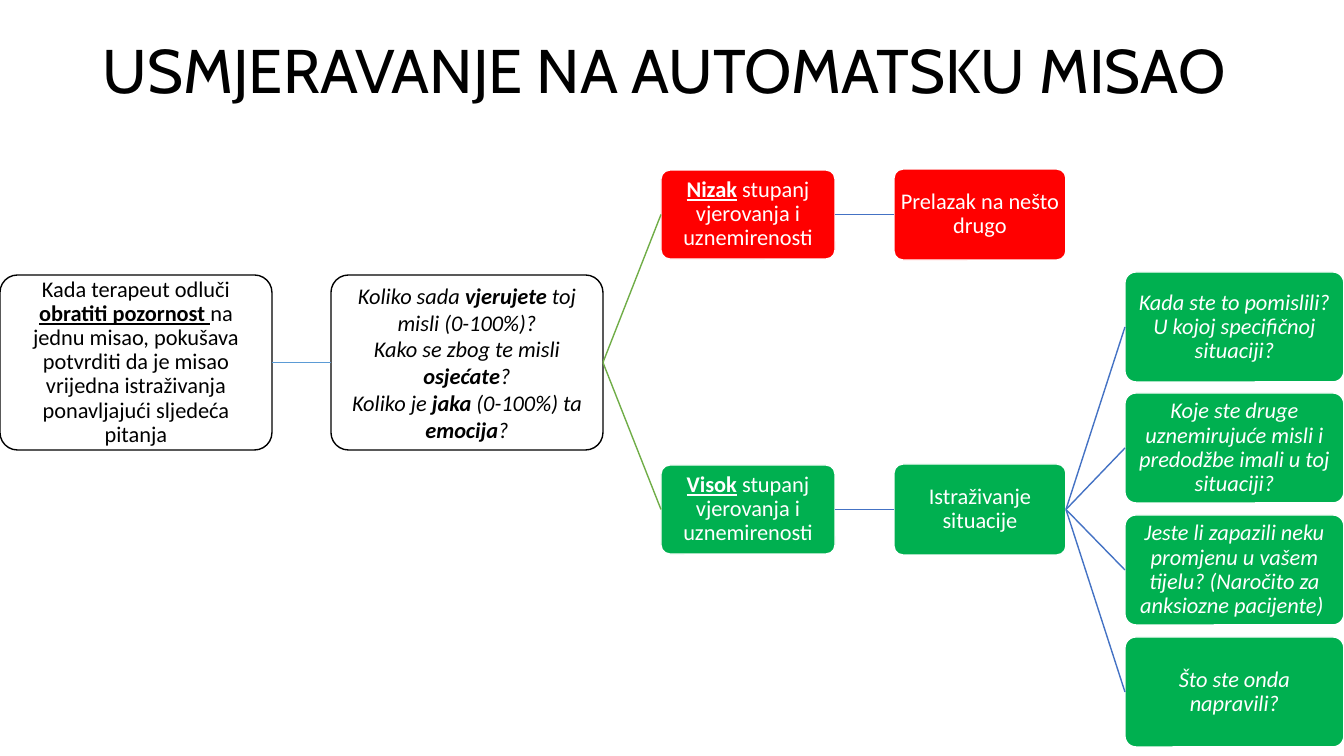
import pptx
import pptx.dml.color
import pptx.enum.shapes
import pptx.enum.text
import pptx.oxml.ns
import pptx.util
from lxml import etree

RGBColor = pptx.dml.color.RGBColor
BLACK = RGBColor(0x00, 0x00, 0x00)
WHITE = RGBColor(0xFF, 0xFF, 0xFF)
RED = RGBColor(0xFF, 0x00, 0x00)
GREEN = RGBColor(0x00, 0xB0, 0x50)
LIGHT_BLUE = RGBColor(0x5B, 0x9B, 0xD5)
LEAF = RGBColor(0x70, 0xAD, 0x47)
BLUE = RGBColor(0x44, 0x72, 0xC4)

PLAIN = {}
ITALIC = {"italic": True}
STRONG = {"bold": True, "underline": True}
STRONG_ITALIC = {"bold": True, "italic": True}
LEFT, RIGHT = 1, 3


def px(length):
    return pptx.util.Emu(round(length * 914400 / 100.8))


class Diagram:
    body = {"name": "Calibri", "size": pptx.util.Pt(16)}
    heading = {"name": "Cabin", "size": pptx.util.Pt(44)}

    def __init__(self):
        self.deck = pptx.Presentation()
        self.deck.slide_width, self.deck.slide_height = px(1344), px(756)
        self.slide = self.deck.slides.add_slide(self.deck.slide_layouts[6])

    def fill_text(self, shape, paragraphs, style, color, align, spacing, insets):
        frame = shape.text_frame
        frame.word_wrap = True
        frame.vertical_anchor = pptx.enum.text.MSO_ANCHOR.MIDDLE
        for side, inset in zip(("left", "top", "right", "bottom"), insets * 2):
            setattr(frame, f"margin_{side}", px(inset))
        for index, runs in enumerate(paragraphs):
            paragraph = frame.add_paragraph() if index else frame.paragraphs[0]
            paragraph.alignment = align
            paragraph.line_spacing = spacing
            for text, emphasis in runs:
                run = paragraph.add_run()
                run.text = text
                for key, value in {**style, **emphasis}.items():
                    setattr(run.font, key, value)
                run.font.color.rgb = color

    def title(self, text, bounds):
        box = self.slide.shapes.add_textbox(*map(px, bounds))
        self.fill_text(box, [[(text, PLAIN)]], self.heading, BLACK,
                       pptx.enum.text.PP_ALIGN.LEFT, 0.9, (10, 5))

    def node(self, bounds, paragraphs, fill, ink=WHITE, line=WHITE, spacing=0.9, inset=4):
        box = self.slide.shapes.add_shape(
            pptx.enum.shapes.MSO_SHAPE.ROUNDED_RECTANGLE, *map(px, bounds))
        box.adjustments[0] = 0.1
        box.shadow.inherit = False
        box.fill.solid()
        box.fill.fore_color.rgb = fill
        box.line.color.rgb = line
        box.line.width = pptx.util.Pt(1)
        self.fill_text(box, paragraphs, self.body, ink,
                       pptx.enum.text.PP_ALIGN.CENTER, spacing, (inset, inset))
        return box

    def link(self, source, target, color):
        line = self.slide.shapes.add_connector(
            pptx.enum.shapes.MSO_CONNECTOR.STRAIGHT, 0, 0, 0, 0)
        line.begin_connect(source, RIGHT)
        line.end_connect(target, LEFT)
        line.line.color.rgb = color
        line.line.width = pptx.util.Pt(1)
        etree.SubElement(line._element.spPr, pptx.oxml.ns.qn("a:effectLst"))


def main():
    diagram = Diagram()
    diagram.title("USMJERAVANJE NA AUTOMATSKU MISAO", (93, 1, 1159, 146))

    outlined = {"fill": WHITE, "ink": BLACK, "line": BLACK, "inset": 6}
    decision = diagram.node((0, 275, 272, 175), [[
        ("Kada terapeut odluči ", PLAIN),
        ("obratiti pozornost ", STRONG),
        ("na jednu misao, pokušava potvrditi da je misao vrijedna "
         "istraživanja ponavljajući sljedeća pitanja", PLAIN),
    ]], **outlined)
    rating = diagram.node((331, 275, 272, 175), [
        [("Koliko sada ", ITALIC), ("vjerujete", STRONG_ITALIC),
         (" toj misli (0-100%)?", ITALIC)],
        [("Kako se zbog te misli ", ITALIC), ("osjećate", STRONG_ITALIC), ("?", ITALIC)],
        [("Koliko je ", ITALIC), ("jaka", STRONG_ITALIC), (" (0-100%) ta ", ITALIC),
         ("emocija", STRONG_ITALIC), ("?", ITALIC)],
    ], spacing=1.0, **outlined)
    diagram.link(decision, rating, LIGHT_BLUE)

    branches = [
        (170, "Nizak", "Prelazak na nešto drugo", RED),
        (465, "Visok", "Istraživanje situacije", GREEN),
    ]
    for top, degree, step, fill in branches:
        level = diagram.node(
            (661, top, 174, 89),
            [[(degree, STRONG), (" stupanj vjerovanja i uznemirenosti", PLAIN)]], fill)
        action = diagram.node((894, top - 1, 172, 91), [[(step, PLAIN)]], fill)
        diagram.link(rating, level, LEAF)
        diagram.link(level, action, BLUE)

    questions = [
        "Kada ste to pomislili? U kojoj specifičnoj situaciji?",
        "Koje ste druge uznemirujuće misli i predodžbe imali u toj situaciji?",
        "Jeste li zapazili neku promjenu u vašem tijelu? (Naročito za anksiozne pacijente) ",
        "Što ste onda napravili?",
    ]
    for row, wording in enumerate(questions):
        question = diagram.node(
            (1125, 272 + row * 365 // 3, 219, 110), [[(wording, ITALIC)]], GREEN)
        diagram.link(action, question, BLUE)

    diagram.deck.save("out.pptx")


if __name__ == "__main__":
    main()
